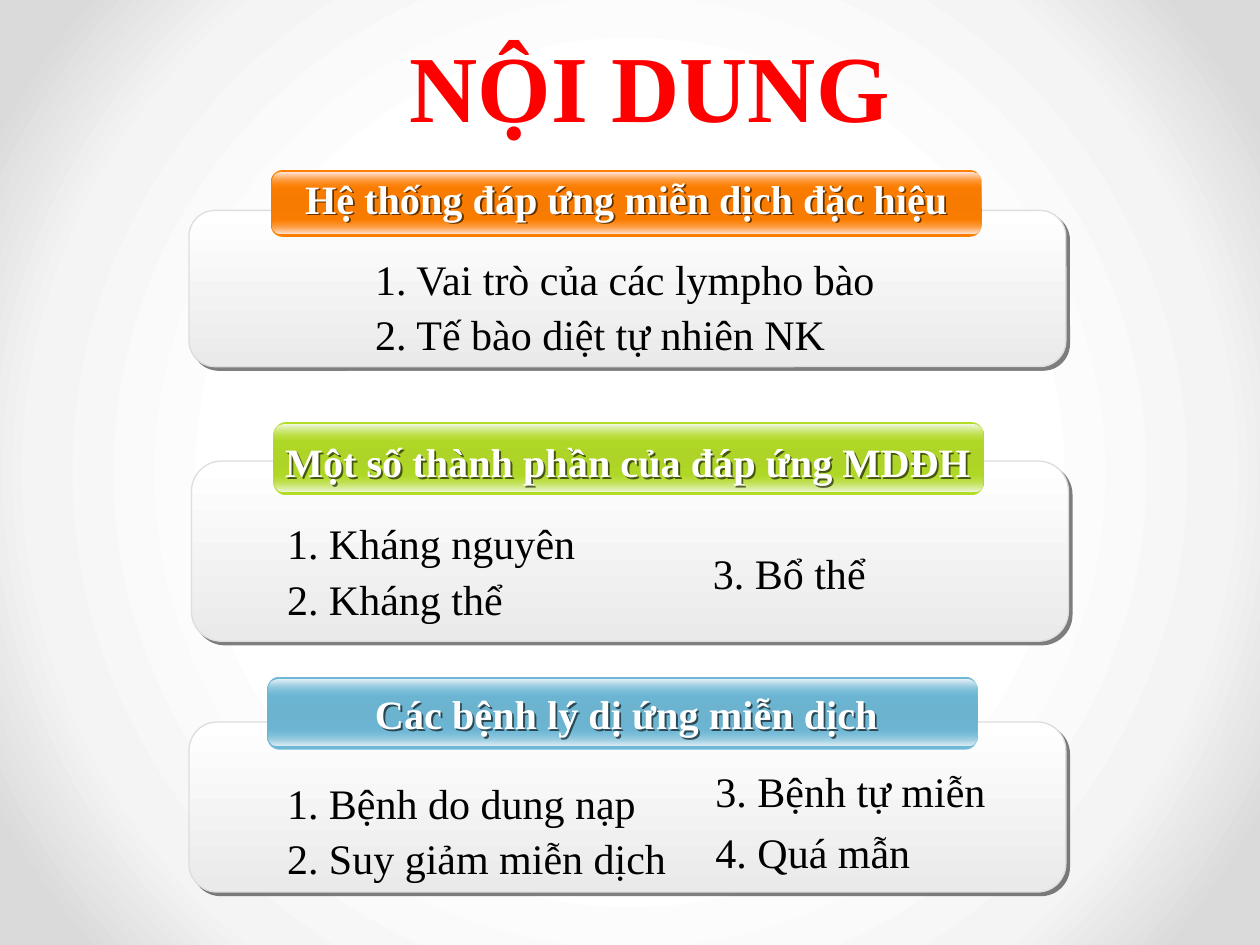
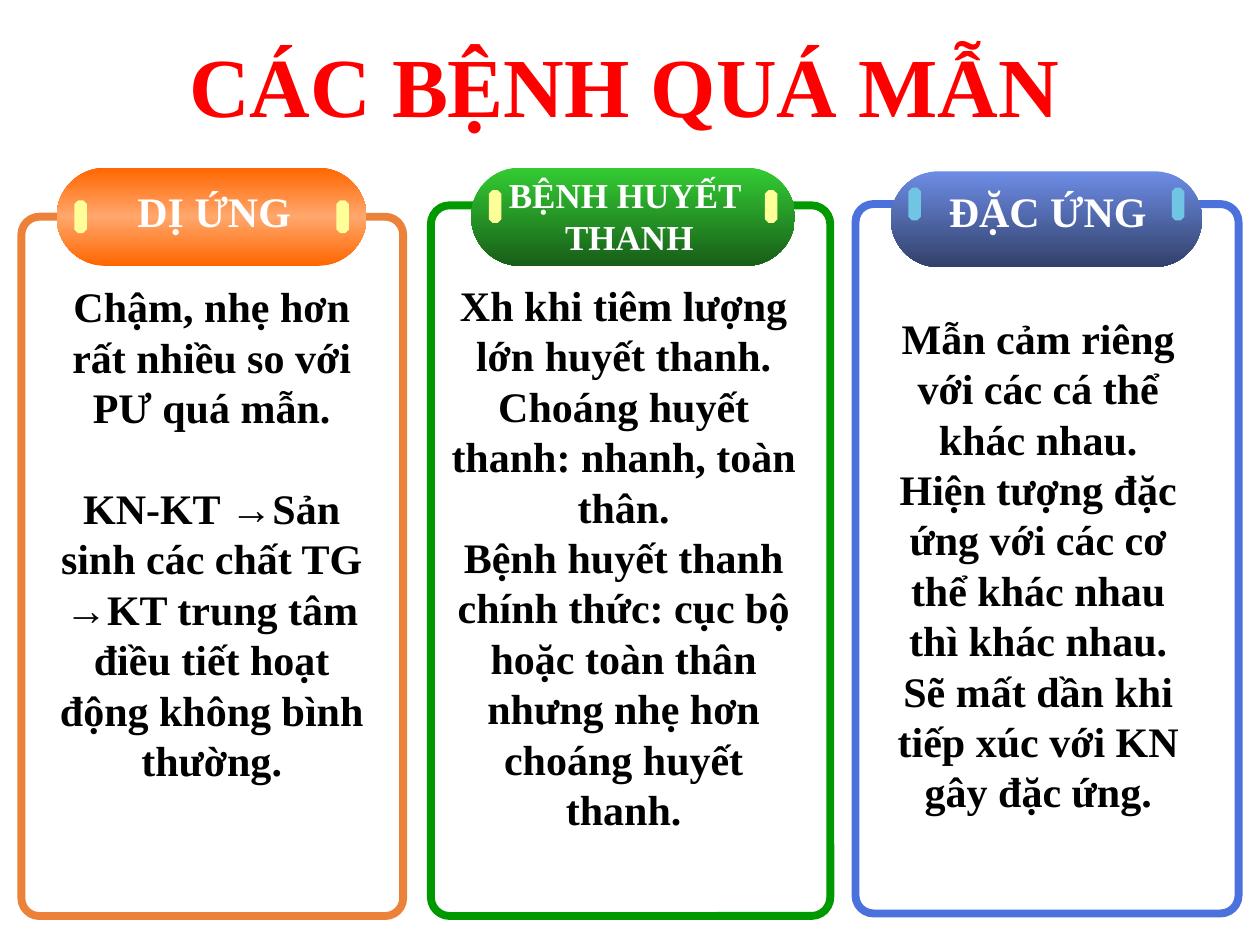
from dataclasses import dataclass

from lxml import etree
from pptx import Presentation
from pptx.dml.color import RGBColor
from pptx.enum.shapes import MSO_SHAPE as Shape
from pptx.enum.text import MSO_ANCHOR as Anchor, PP_ALIGN as Align
from pptx.oxml.ns import nsdecls, qn
from pptx.util import Inches, Pt


@dataclass(frozen=True)
class Theme:
    font: str = "Times New Roman"
    title: str = "FF0000"
    body: str = "000000"
    light: str = "FFFFFF"
    card_end: str = "EAEAEA"
    card_line: str = "DDDDDD"
    shadow: str = "000000"
    yellow_mark: str = "FFFF99"
    blue_mark: str = "6FC5E3"
    backdrop: tuple = ((50, "FFFFFF"), (76, "F4F4F4"), (92, "DADADA"))
    contents_title_size: int = 54
    title_size: int = 48
    body_size: int = 24
    banner_size: int = 23
    small_size: int = 20
    title_spacing: int = 58
    list_spacing: float = 1.1


THEME = Theme()


# Boxes are (left, top, width, height) in inches.
@dataclass(frozen=True)
class ItemList:
    box: tuple
    items: tuple
    spacing: float = THEME.list_spacing
    gap: float = 0


@dataclass(frozen=True)
class Section:
    heading: str
    heading_box: tuple
    card: tuple
    banner: tuple
    color: str
    middle: str
    upper_glow: str
    lower_glow: str
    lists: tuple


@dataclass(frozen=True)
class Column:
    heading: tuple
    heading_box: tuple
    panel: tuple
    panel_color: str
    pill: tuple
    pill_stops: tuple
    mark_top: float
    body: tuple
    body_box: tuple
    mark_color: str = THEME.yellow_mark
    heading_size: int = THEME.body_size
    gap: float = 0


# --- Content ---
SECTIONS = (
    Section("Hệ thống đáp ứng miễn dịch đặc hiệu", (2.3, 1.33, 5.35, 0.49),
            card=(1.5, 1.67, 6.96, 1.24), banner=(2.15, 1.35, 5.64, 0.53),
            color="FF7F00", middle="F67B00", upper_glow="FFEAE4", lower_glow="FFECE7",
            lists=(ItemList((2.88, 1.92, 4.46, 0.99),
                            ("1. Vai trò của các lympho bào",
                             "2. Tế bào diệt tự nhiên NK")),)),
    Section("Một số thành phần của đáp ứng MDĐH", (2.14, 3.42, 5.69, 0.49),
            card=(1.52, 3.66, 6.96, 1.43), banner=(2.17, 3.35, 5.64, 0.58),
            color="B3DC27", middle="ADD426", upper_glow="F5FAED", lower_glow="F3F9E9",
            lists=(ItemList((2.18, 4.02, 2.86, 0.99), ("1. Kháng nguyên", "2. Kháng thể")),
                   ItemList((5.56, 4.26, 1.43, 0.51), ("3. Bổ thể",)))),
    Section("Các bệnh lý dị ứng miễn dịch", (2.86, 5.42, 4.23, 0.49),
            card=(1.5, 5.73, 6.96, 1.35), banner=(2.12, 5.37, 5.64, 0.58),
            color="6FB9D7", middle="6BB3CF", upper_glow="ECF4F8", lower_glow="E5F0F6",
            lists=(ItemList((2.18, 6.08, 3.24, 0.99),
                            ("1. Bệnh do dung nạp", "2. Suy giảm miễn dịch")),
                   ItemList((5.58, 6.1, 2.42, 0.95),
                            ("3. Bệnh tự miễn", "4. Quá mẫn"), spacing=0.8, gap=12))),
)

COLUMNS = (
    Column(("DỊ ỨNG",), (0.98, 1.42, 1.44, 0.55),
           panel=(0.17, 1.72, 3.03, 5.55), panel_color="EC823A",
           pill=(0.45, 1.33, 2.46, 0.78),
           pill_stops=((0, "FF6600"), (50, "FFA76C"), (100, "FF6600")), mark_top=1.59,
           body=("Chậm, nhẹ hơn rất nhiều so với PƯ quá mẫn.",
                 "KN-KT →Sản sinh các chất TG →KT trung tâm điều tiết hoạt động "
                 "không bình thường."),
           body_box=(0.27, 2.18, 2.82, 4.48), gap=28.8),
    Column(("BỆNH HUYẾT ", "THANH"), (3.93, 1.33, 2.13, 0.83),
           panel=(3.42, 1.63, 3.17, 5.64), panel_color="009900",
           pill=(3.74, 1.33, 2.57, 0.78),
           pill_stops=((0, "33CC33"), (100, "185E18")), mark_top=1.51,
           body=("Xh khi tiêm lượng lớn huyết thanh.",
                 "Choáng huyết thanh: nhanh, toàn thân.",
                 "Bệnh huyết thanh chính thức: cục bộ hoặc toàn thân nhưng nhẹ hơn "
                 "choáng huyết thanh."),
           body_box=(3.45, 2.17, 3, 4.54), heading_size=THEME.small_size),
    Column(("ĐẶC ỨNG",), (7.42, 1.42, 1.79, 0.55),
           panel=(6.79, 1.62, 3.04, 5.63), panel_color="4B71DD",
           pill=(7.07, 1.36, 2.47, 0.76),
           pill_stops=((0, "6D8CE5"), (100, "32416A")), mark_top=1.49,
           body=("Mẫn cảm riêng với các cá thể khác nhau.",
                 "Hiện tượng đặc ứng với các cơ thể khác nhau thì khác nhau.",
                 "Sẽ mất dần khi tiếp xúc với KN gây đặc ứng."),
           body_box=(7.02, 2.43, 2.44, 4.14), mark_color=THEME.blue_mark),
)


# --- Formatting helpers ---
def rgb(color):
    return RGBColor.from_string(color)


def color_xml(color, opacity=100):
    return f'<a:srgbClr val="{color}"><a:alpha val="{opacity * 1000}"/></a:srgbClr>'


def paint_gradient(fill, owner, stops, radial=False):
    """Stops are (percent, colour) or (percent, colour, opacity percent)."""
    stops_xml = "".join(f'<a:gs pos="{position * 1000}">{color_xml(*color)}</a:gs>'
                        for position, *color in stops)
    direction = '<a:lin ang="5400000" scaled="0"/>'
    if radial:
        direction = ('<a:path path="circle"><a:fillToRect l="50000" t="50000" '
                     'r="50000" b="50000"/></a:path>')
    gradient = etree.fromstring(f'<a:gradFill {nsdecls("a")} rotWithShape="1">'
                                f"<a:gsLst>{stops_xml}</a:gsLst>{direction}</a:gradFill>")
    fill.background()
    no_fill = owner.find(".//" + qn("a:noFill"))
    no_fill.getparent().replace(no_fill, gradient)


def cast_shadow(shape, distance, opacity):
    """Cast a sharp shadow to the lower right; an unfilled box casts its text's."""
    shape.shadow.inherit = False
    shape.element.spPr.find(qn("a:effectLst")).append(etree.fromstring(
        f'<a:outerShdw {nsdecls("a")} blurRad="0" dist="{Pt(distance)}" dir="2700000" '
        f'algn="ctr" rotWithShape="0">{color_xml(THEME.shadow, opacity)}</a:outerShdw>'))


def add_box(slide, kind, box, adjust, fill=None, stops=None, line=None, line_width=0.75):
    shape = slide.shapes.add_shape(kind, *map(Inches, box))
    shape.adjustments[0] = adjust
    shape.shadow.inherit = False
    if stops:
        paint_gradient(shape.fill, shape.element.spPr, stops)
    elif fill:
        shape.fill.solid()
        shape.fill.fore_color.rgb = rgb(fill)
    else:
        shape.fill.background()
    if line:
        shape.line.color.rgb = rgb(line)
        shape.line.width = Pt(line_width)
    else:
        shape.line.fill.background()
    return shape


def add_text(slide, box, paragraphs, size=THEME.body_size, color=THEME.body, bold=False,
             align=Align.LEFT, anchor=Anchor.TOP, spacing=None, gap=0, wrap=True):
    """Gap is the space in points between paragraphs."""
    text_box = slide.shapes.add_textbox(*map(Inches, box))
    frame = text_box.text_frame
    frame.word_wrap = wrap
    frame.vertical_anchor = anchor
    for index, words in enumerate(paragraphs):
        paragraph = frame.add_paragraph() if index else frame.paragraphs[0]
        paragraph.alignment = align
        paragraph.line_spacing = spacing
        if index and gap:
            paragraph.space_before = Pt(gap)
        run = paragraph.add_run()
        run.text = words
        run.font.name = THEME.font
        run.font.size = Pt(size)
        run.font.bold = bold
        run.font.color.rgb = rgb(color)
    return text_box


def add_title(slide, box, words, size, anchor):
    add_text(slide, box, [words], size=size, color=THEME.title, bold=True,
             align=Align.CENTER, anchor=anchor, spacing=Pt(THEME.title_spacing))


def add_heading(slide, box, lines, size):
    return add_text(slide, box, lines, size=size, color=THEME.light, bold=True,
                    align=Align.CENTER, wrap=False)


# --- Contents slide ---
def add_banner(slide, section):
    left, top, width, height = section.banner
    color = section.color
    add_box(slide, Shape.ROUNDED_RECTANGLE, section.banner, 0.175,
            stops=[(0, color), (50, section.middle), (100, color)])
    glow_height = height * 0.24
    lower_top = top + height - glow_height - 0.03
    glows = [(lower_top, [(0, color, 0), (100, section.lower_glow)]),
             (top + 0.02, [(0, section.upper_glow), (100, color, 0)])]
    for glow_top, stops in glows:
        add_box(slide, Shape.ROUNDED_RECTANGLE,
                (left + 0.01, glow_top, width - 0.02, glow_height), 0.5, stops=stops)


def add_section(slide, section):
    card = add_box(slide, Shape.ROUNDED_RECTANGLE, section.card, 0.167,
                   stops=[(0, THEME.light), (100, THEME.card_end)], line=THEME.card_line)
    cast_shadow(card, distance=2.8, opacity=50)
    add_banner(slide, section)
    heading = add_heading(slide, section.heading_box, [section.heading], THEME.banner_size)
    cast_shadow(heading, distance=1.5, opacity=60)
    for entry in section.lists:
        add_text(slide, entry.box, entry.items, spacing=entry.spacing, gap=entry.gap)


def build_contents(slide):
    paint_gradient(slide.background.fill, slide.element, THEME.backdrop, radial=True)
    for section in SECTIONS:
        add_section(slide, section)
    add_title(slide, (0.75, 0.17, 9, 1), "NỘI DUNG ", THEME.contents_title_size,
              Anchor.BOTTOM)


# --- Hypersensitivity slide ---
def add_pill(slide, column):
    """Draw the pill with one mark at the same inset from each end."""
    add_box(slide, Shape.ROUNDED_RECTANGLE, column.pill, 0.5, stops=column.pill_stops)
    left, _, width, _ = column.pill
    mark_inset, mark_width, mark_height = 0.14, 0.1, 0.26
    for mark_left in (left + mark_inset, left + width - mark_inset - mark_width):
        add_box(slide, Shape.OCTAGON, (mark_left, column.mark_top, mark_width, mark_height),
                0.293, fill=column.mark_color)


def add_column(slide, column):
    add_box(slide, Shape.ROUNDED_RECTANGLE, column.panel, 0.047,
            line=column.panel_color, line_width=4.5)
    add_pill(slide, column)
    add_heading(slide, column.heading_box, column.heading, column.heading_size)
    add_text(slide, column.body_box, column.body, bold=True, align=Align.CENTER,
             gap=column.gap)


def build_hypersensitivity(slide):
    add_title(slide, (0.82, 0.25, 8.27, 0.83), "CÁC BỆNH QUÁ MẪN", THEME.title_size,
              Anchor.MIDDLE)
    for column in COLUMNS:
        add_column(slide, column)


def main():
    deck = Presentation()
    deck.slide_width, deck.slide_height = Inches(10), Inches(7.5)
    blank_layout = deck.slide_layouts[6]
    for build in (build_contents, build_hypersensitivity):
        build(deck.slides.add_slide(blank_layout))
    deck.save("out.pptx")


if __name__ == "__main__":
    main()
